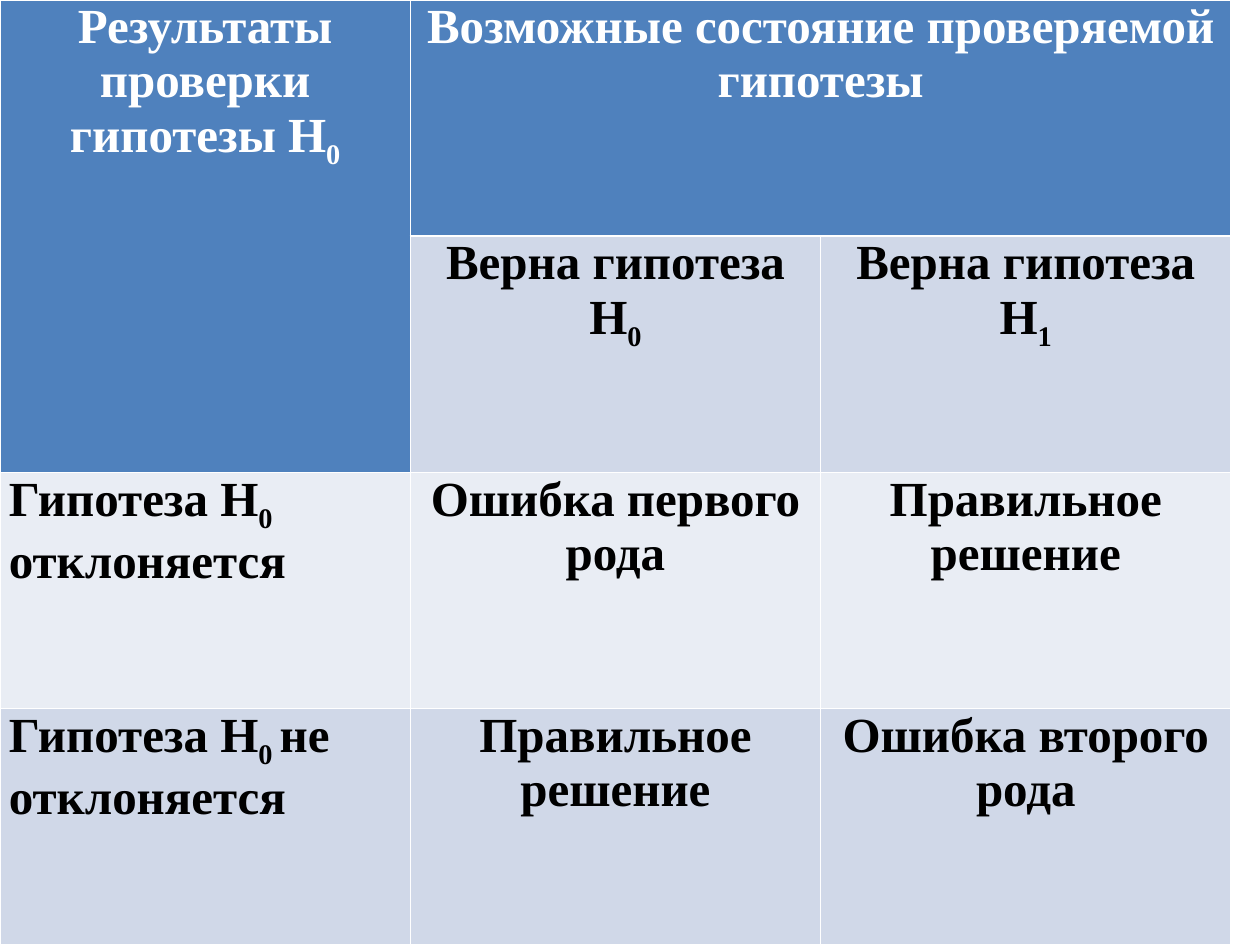
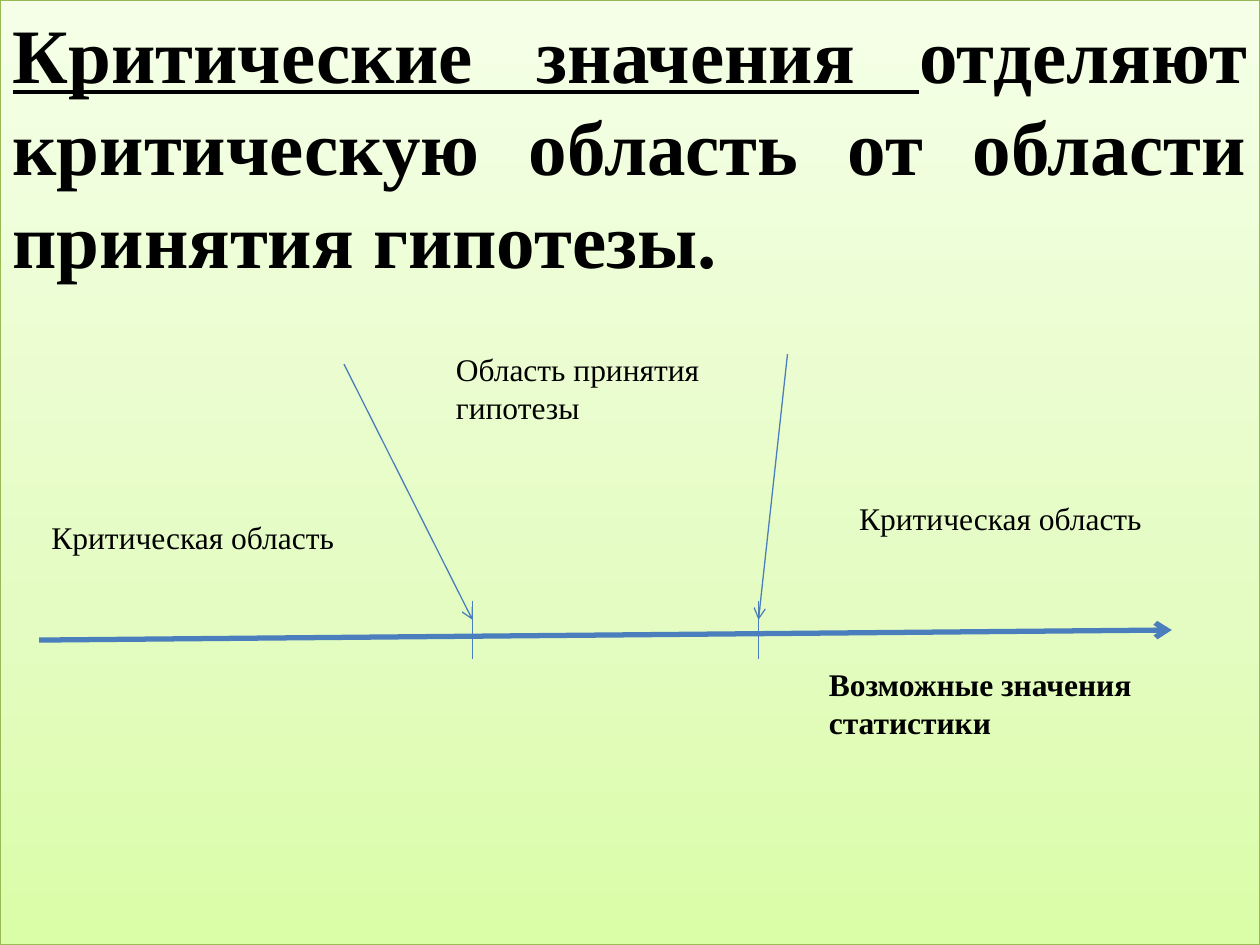
from copy import deepcopy

from lxml import etree
from pptx import Presentation
from pptx.dml.color import RGBColor
from pptx.enum.shapes import MSO_CONNECTOR
from pptx.enum.text import MSO_ANCHOR, MSO_AUTO_SIZE, PP_ALIGN
from pptx.oxml.ns import qn
from pptx.util import Inches, Pt

LEFT, CENTER, JUSTIFY = PP_ALIGN.LEFT, PP_ALIGN.CENTER, PP_ALIGN.JUSTIFY
STRAIGHT = MSO_CONNECTOR.STRAIGHT
FIT, FIXED = MSO_AUTO_SIZE.SHAPE_TO_FIT_TEXT, MSO_AUTO_SIZE.NONE
TOP = MSO_ANCHOR.TOP

FONT = "Times New Roman"
BLACK = RGBColor(0, 0, 0)
WHITE = RGBColor(255, 255, 255)
HEAD = RGBColor(0x4F, 0x81, 0xBD)
BANDS = RGBColor(0xD0, 0xD8, 0xE8), RGBColor(0xE9, 0xED, 0xF4)
BLUE = RGBColor(0x4B, 0x7E, 0xBC)
GREEN = RGBColor(0x98, 0xB9, 0x55)
SHADES = [
    (0, RGBColor(0xDA, 0xFD, 0xA7)),
    (0.35, RGBColor(0xE4, 0xFC, 0xC2)),
    (1, RGBColor(0xF5, 0xFF, 0xE7)),
]

WIDE, HIGH = 10, 7.5

# A run is (text, mark); the mark is "", "sub" or "under".
RIGHT_CALL = [("Правильное решение", "")]
GRID = [
    [[("Результаты проверки гипотезы H", ""), ("0", "sub")],
     [("Возможные состояние проверяемой гипотезы", "")], None],
    [None,
     [("Верна гипотеза H", ""), ("0", "sub")],
     [("Верна гипотеза H", ""), ("1", "sub")]],
    [[("Гипотеза H", ""), ("0 ", "sub"), ("отклоняется", "")],
     [("Ошибка первого рода", "")], RIGHT_CALL],
    [[("Гипотеза H", ""), ("0 ", "sub"), ("не отклоняется", "")],
     RIGHT_CALL, [("Ошибка второго рода", "")]],
]
GRID_WIDE = 9.77

CLAIM = [("Критические значения ", "under"),
         ("отделяют критическую область от области принятия гипотезы.", "")]

# text, left, top, width, height, bold
LABELS = [
    ("Возможные значения статистики", 6.48, 5.23, 3.2, 0.71, True),
    ("Критическая область", 6.72, 3.91, 2.89, 0.4, False),
    ("Критическая область", 0.31, 4.06, 2.89, 0.4, False),
    ("Область принятия гипотезы", 3.52, 2.73, 2.34, 0.71, False),
]

# Critical points on the axis, each with the start of its pointer
POINTS = [(3.75, (2.73, 2.89)), (6.02, (6.25, 2.81))]
TICK_TOP, TICK_END, TIP = 4.77, 5.23, 4.92
AXIS = (0.31, 5.08), (9.3, 5)


def write(frame, runs, size=18, color=BLACK, bold=False, align=LEFT):
    frame.word_wrap = True
    para = frame.paragraphs[0]
    para.alignment = align
    for text, mark in runs:
        run = para.add_run()
        run.text = text
        font = run.font
        font.name, font.size, font.bold = FONT, Pt(size), bold
        font.color.rgb = color
        if mark == "under":
            font.underline = True
        elif mark == "sub":
            run._r.get_or_add_rPr().set("baseline", "-25000")


def draw(slide, start, end, width=0.75, arrow=False):
    line = slide.shapes.add_connector(
        STRAIGHT, *(Inches(n) for n in (*start, *end)))
    line.line.color.rgb = BLUE
    line.line.width = Pt(width)
    if arrow:
        etree.SubElement(line.line._get_or_add_ln(), qn("a:tailEnd"),
                         type="arrow")
    etree.SubElement(line.element.spPr, qn("a:effectLst"))


def add_grid(deck):
    slide = deck.slides.add_slide(deck.slide_layouts[6])
    rows, cols = len(GRID), len(GRID[0])
    table = slide.shapes.add_table(
        rows, cols, 0, 0, Inches(GRID_WIDE), Inches(HIGH)).table
    table.cell(0, 0).merge(table.cell(1, 0))
    table.cell(0, 1).merge(table.cell(0, 2))
    for r, row in enumerate(GRID):
        for c, runs in enumerate(row):
            cell = table.cell(r, c)
            head = r == 0 or (r, c) == (1, 0)
            cell.fill.solid()
            cell.fill.fore_color.rgb = HEAD if head else BANDS[(r - 1) % 2]
            if runs is None:
                continue
            cell.margin_left = cell.margin_right = Inches(0.07)
            cell.margin_top = cell.margin_bottom = 0
            side = c == 0 and not head
            write(cell.text_frame, runs, size=28, bold=True,
                  color=WHITE if head else BLACK,
                  align=LEFT if side else CENTER)


def shade(fill):
    """Blend SHADES from the bottom edge to the top."""
    fill.gradient()
    fill.gradient_angle = 90
    stops = fill._xPr.findall(".//" + qn("a:gs"))
    stops[0].addnext(deepcopy(stops[0]))
    for stop, (spot, color) in zip(fill.gradient_stops, SHADES):
        stop.position = spot
        stop.color.rgb = color


def add_axis(deck):
    slide = deck.slides.add_slide(deck.slide_layouts[0])
    title, panel = slide.placeholders
    title.element.getparent().remove(title.element)
    panel.left = panel.top = 0
    panel.width, panel.height = Inches(WIDE), Inches(HIGH)
    shade(panel.fill)
    panel.line.color.rgb = GREEN
    panel.line.width = Pt(0.75)
    panel.shadow.inherit = False
    frame = panel.text_frame
    frame.auto_size, frame.vertical_anchor = FIXED, TOP
    write(frame, CLAIM, size=44, bold=True, align=JUSTIFY)

    draw(slide, *AXIS, width=3, arrow=True)
    for x, start in POINTS:
        draw(slide, (x, TICK_TOP), (x, TICK_END))
        draw(slide, start, (x, TIP), arrow=True)
    for text, *box, bold in LABELS:
        frame = slide.shapes.add_textbox(
            *(Inches(n) for n in box)).text_frame
        write(frame, [(text, "")], bold=bold)
        frame.auto_size = FIT


def main():
    deck = Presentation()
    deck.slide_width, deck.slide_height = Inches(WIDE), Inches(HIGH)
    add_grid(deck)
    add_axis(deck)
    deck.save("out.pptx")


if __name__ == "__main__":
    main()
